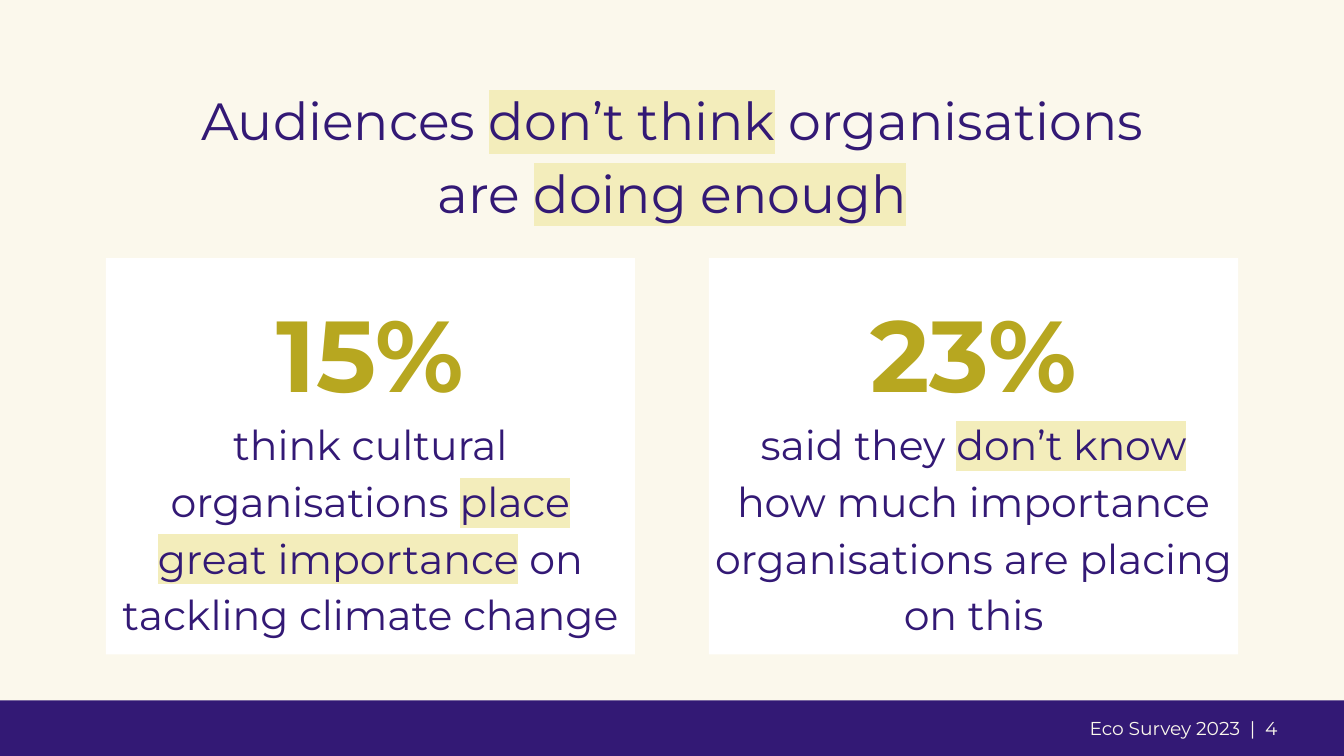
from dataclasses import dataclass

from lxml.etree import SubElement
from pptx import Presentation
from pptx.dml.color import RGBColor
from pptx.enum.shapes import MSO_SHAPE
from pptx.enum.text import MSO_ANCHOR as Anchor, MSO_AUTO_SIZE as AutoSize, PP_ALIGN as Align
from pptx.oxml.ns import qn
from pptx.util import Cm, Pt


@dataclass(frozen=True)
class Theme:
    font: str = "Montserrat"
    cream: str = "FBF8EC"
    purple: str = "331975"
    white: str = "FFFFFF"
    gold: str = "B7A720"
    highlight: str = "F3EDBB"
    title_size: int = 28
    figure_size: int = 54
    body_size: int = 22
    footer_size: int = 10


theme = Theme()


def write_runs(paragraph, runs, size, color, bold=False):
    """Add (text, highlighted) runs; a newline in the text is a line break."""
    for text, highlighted in runs:
        for index, line in enumerate(text.split("\n")):
            if index:
                paragraph.add_line_break()
            if not line:
                continue
            run = paragraph.add_run()
            run.text = line
            run.font.color.rgb = RGBColor.from_string(color)
            if highlighted:
                mark = SubElement(run.font._element, qn("a:highlight"))
                SubElement(mark, qn("a:srgbClr"), val=theme.highlight)
            for name, value in {"name": theme.font, "size": Pt(size), "bold": bold}.items():
                setattr(run.font, name, value)


def add_rectangle(left, top, width, height, color):
    shape = slide.shapes.add_shape(
        MSO_SHAPE.RECTANGLE, Cm(left), Cm(top), Cm(width), Cm(height))
    shape.shadow.inherit = False
    shape.fill.solid()
    shape.fill.fore_color.rgb = RGBColor.from_string(color)
    shape.line.fill.background()
    return shape


presentation = Presentation()
presentation.slide_width, presentation.slide_height = Cm(25.4), Cm(14.29)
slide = presentation.slides.add_slide(presentation.slide_layouts[5])
slide.background.fill.solid()
slide.background.fill.fore_color.rgb = RGBColor.from_string(theme.cream)

no_margins = dict.fromkeys(("margin_left", "margin_top", "margin_right", "margin_bottom"), 0)
frame_format = {"word_wrap": True, "auto_size": AutoSize.NONE, **no_margins}
centred = {"alignment": Align.CENTER, "line_spacing": 1.15}

# Title
title = slide.shapes.title
for name, value in {"left": 2, "top": 1.5, "width": 21.4, "height": 2.51}.items():
    setattr(title, name, Cm(value))
for name, value in {**frame_format, "vertical_anchor": Anchor.TOP}.items():
    setattr(title.text_frame, name, value)
paragraph = title.text_frame.paragraphs[0]
for name, value in {**centred, "space_before": Pt(0)}.items():
    setattr(paragraph, name, value)
title_runs = [("Audiences ", False), ("don’t think", True),
              (" organisations\nare ", False), ("doing enough", True)]
write_runs(paragraph, title_runs, theme.title_size, theme.purple)

# Finding cards
cards = [
    ("15%", [("think cultural organisations ", False),
             ("place\ngreat importance", True),
             (" on tackling climate change", False)]),
    ("23%", [("said they ", False), ("don’t know\n", True),
             ("how much importance organisations are placing on this", False)]),
]
card_left, card_pitch = 2, 11.4
for index, (figure, statement) in enumerate(cards):
    card = add_rectangle(card_left + index * card_pitch, 4.88, 10, 7.49, theme.white)
    frame = card.text_frame
    for name, value in {**frame_format, "vertical_anchor": Anchor.MIDDLE}.items():
        setattr(frame, name, value)
    figure_paragraph, statement_paragraph = frame.paragraphs[0], frame.add_paragraph()
    for paragraph in frame.paragraphs:
        for name, value in centred.items():
            setattr(paragraph, name, value)
    write_runs(figure_paragraph, [(figure, False)], theme.figure_size, theme.gold, bold=True)
    write_runs(statement_paragraph, statement, theme.body_size, theme.purple)

# Footer
add_rectangle(-0.08, 13.24, 25.58, 1.12, theme.purple)
footer = slide.shapes.add_textbox(Cm(19.74), Cm(13.24), Cm(4.65), Cm(1.04))
footer.text_frame.word_wrap = True
footer.text_frame.vertical_anchor = Anchor.MIDDLE
paragraph = footer.text_frame.paragraphs[0]
paragraph.alignment = Align.RIGHT
write_runs(paragraph, [("Eco Survey 2023  |  4", False)], theme.footer_size, theme.cream)

presentation.save("out.pptx")
